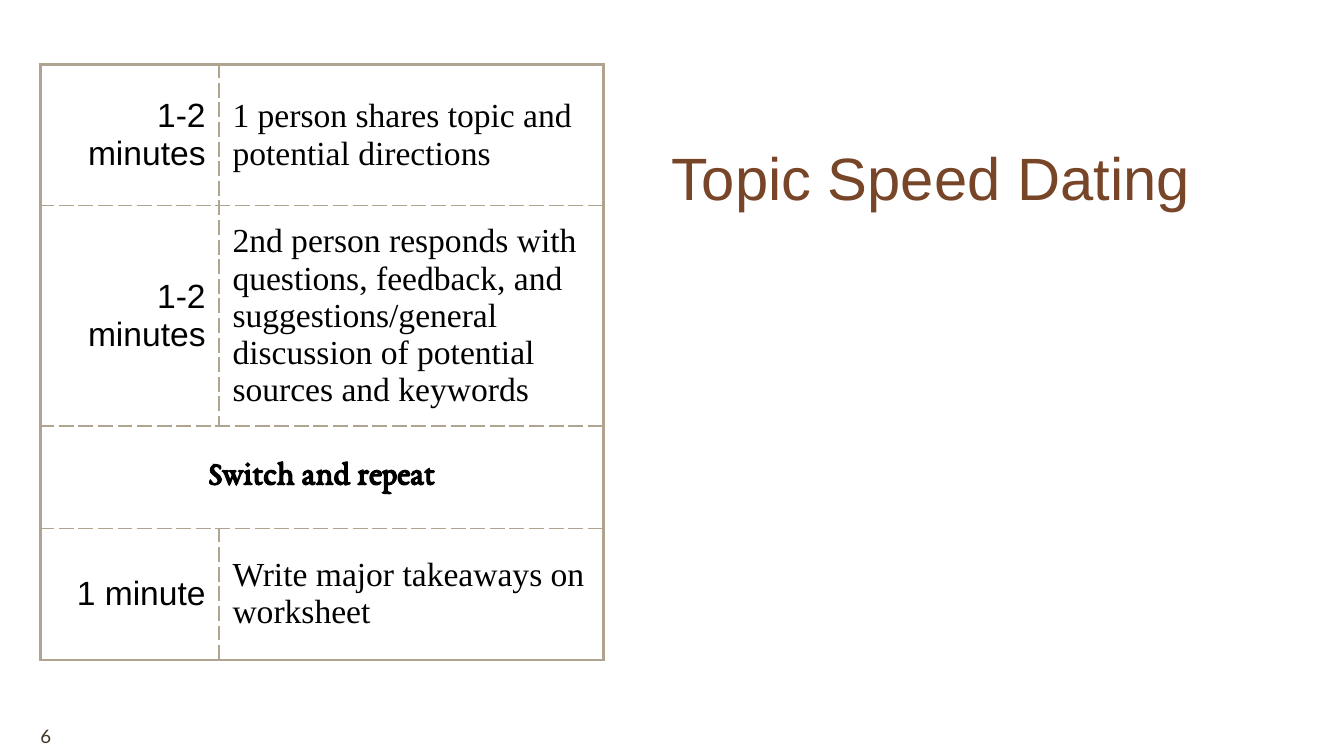
from lxml.etree import SubElement
from pptx import Presentation
from pptx.dml.color import RGBColor
from pptx.enum.text import MSO_ANCHOR as Anchor, PP_ALIGN as Align
from pptx.oxml.ns import qn
from pptx.util import Inches, Pt

BROWN = RGBColor(0x77, 0x45, 0x28)
DARK = RGBColor(0x41, 0x37, 0x24)
TAN = RGBColor(0xB0, 0xA4, 0x91)
BLACK = RGBColor(0, 0, 0)
WHITE = RGBColor(0xFF, 0xFF, 0xFF)

COLUMN_WIDTHS = (1.33, 2.86)
ROW_HEIGHTS = (1.05, 1.53, 0.76, 0.98)
STEPS = (
    ("1-2 minutes", "1 person shares topic and potential directions"),
    ("1-2 minutes", "2nd person responds with questions, feedback, and "
                    "suggestions/general discussion of potential sources and keywords"),
    ("Switch and repeat", None),
    ("1 minute", "Write major takeaways on worksheet"),
)


class SlideBuilder:
    def __init__(self, slide):
        self.slide = slide

    def format_text(self, frame, font, size, color, align=Align.LEFT, bold=False):
        para = frame.paragraphs[0]
        para.alignment = align
        for span in para.runs:
            span.font.name = font
            span.font.size = Pt(size)
            span.font.color.rgb = color
            span.font.bold = bold

    def text(self, left, top, width, height, words, font, size, color, anchor):
        box = self.slide.shapes.add_textbox(
            Inches(left), Inches(top), Inches(width), Inches(height))
        frame = box.text_frame
        frame.word_wrap = True
        frame.margin_left = frame.margin_right = 0
        frame.margin_top = frame.margin_bottom = 0
        frame.vertical_anchor = anchor
        frame.text = words
        self.format_text(frame, font, size, color)

    def borders(self, cell, outer):
        """Draw solid lines on the outer sides and thin dashes on the others."""
        properties = cell._tc.get_or_add_tcPr()
        for side in "LRTB":
            is_outer = side in outer
            width = Pt(1.5 if is_outer else 0.75)
            line = SubElement(properties, qn(f"a:ln{side}"), w=str(width))
            fill = SubElement(line, qn("a:solidFill"))
            SubElement(fill, qn("a:srgbClr"), val=str(TAN))
            SubElement(line, qn("a:prstDash"), val="solid" if is_outer else "dash")

    def cell(self, cell, words, font, align, bold, outer):
        self.borders(cell, outer)
        cell.fill.solid()
        cell.fill.fore_color.rgb = WHITE
        cell.vertical_anchor = Anchor.MIDDLE
        cell.margin_left = cell.margin_right = Inches(0.1)
        cell.margin_top = cell.margin_bottom = Inches(0.07)
        cell.text_frame.text = words
        self.format_text(cell.text_frame, font, 18, BLACK, align, bold)

    def schedule(self, left, top, steps):
        table = self.slide.shapes.add_table(
            len(steps), len(COLUMN_WIDTHS), Inches(left), Inches(top),
            Inches(sum(COLUMN_WIDTHS)), Inches(sum(ROW_HEIGHTS))).table
        table.first_row = table.horz_banding = False
        for column, width in zip(table.columns, COLUMN_WIDTHS):
            column.width = Inches(width)
        for row, height in zip(table.rows, ROW_HEIGHTS):
            row.height = Inches(height)
        for index, (time, task) in enumerate(steps):
            edge = "T" if index == 0 else "B" if index == len(steps) - 1 else ""
            first, second = table.cell(index, 0), table.cell(index, 1)
            if task is None:
                first.merge(second)
                self.cell(first, time, "EB Garamond", Align.CENTER, True, "LR" + edge)
                self.borders(second, "R" + edge)
            else:
                self.cell(first, time, "Arial", Align.RIGHT, False, "L" + edge)
                self.cell(second, task, "Times New Roman", Align.LEFT, False, "R" + edge)


def main():
    deck = Presentation()
    deck.slide_width = Inches(10)
    deck.slide_height = deck.slide_width * 9 // 16
    page = SlideBuilder(deck.slides.add_slide(deck.slide_layouts[6]))
    page.text(5, 0.48, 4, 1.1, "Topic Speed Dating", "Arial", 32, BROWN, Anchor.BOTTOM)
    page.schedule(0.3, 0.48, STEPS)
    page.text(0.3, 5.34, 9.42, 0.28, "6", "Lato", 10, DARK, Anchor.MIDDLE)
    deck.save("out.pptx")


if __name__ == "__main__":
    main()
